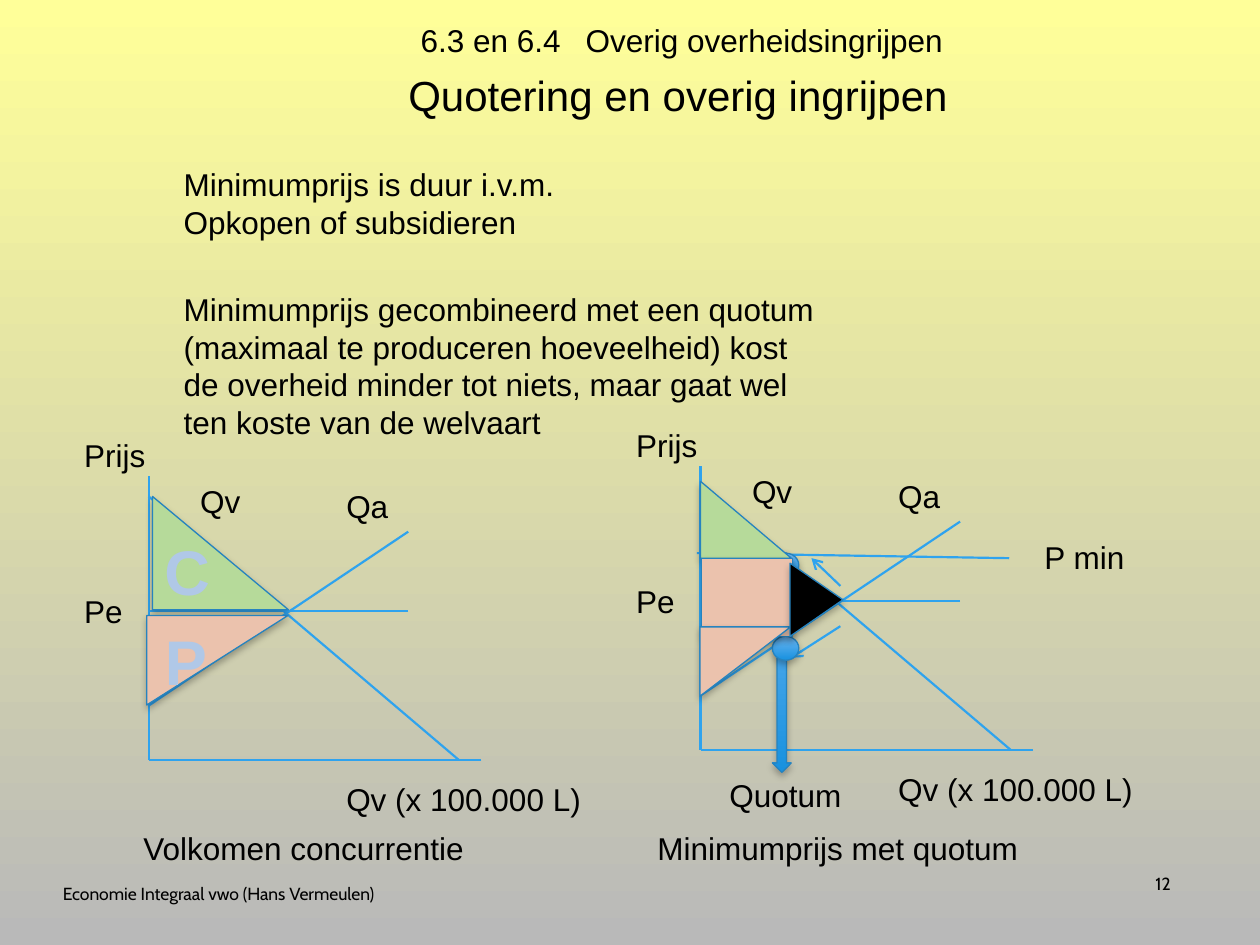
from lxml.etree import SubElement
from pptx import Presentation
from pptx.dml.color import RGBColor
from pptx.enum.shapes import MSO_CONNECTOR, MSO_SHAPE
from pptx.enum.text import MSO_ANCHOR, PP_ALIGN
from pptx.oxml.ns import qn
from pptx.util import Inches, Pt

BLUE, EDGE, GREEN, PINK, PALE = "2FA3EE", "2683BF", "B6DA9A", "EBC2AD", "B0C8E7"
SKY = ("6CB6F1", "1891DF")


def tint(color, value):
    """Set a colour from a hex string."""
    color.rgb = RGBColor.from_string(value)


def blend(fill, pair):
    """Fill from top to bottom with two colours."""
    fill.gradient()
    fill.gradient_angle = 270
    for stop, value in zip(fill.gradient_stops, pair):
        tint(stop.color, value)


def style(box, text, size=18, color="000000", font="Arial", bold=False,
          align=PP_ALIGN.LEFT, anchor=MSO_ANCHOR.TOP, wrap=True, tab=None):
    """Write text into a box and format its runs."""
    frame = box.text_frame
    frame.text = text
    frame.word_wrap = wrap
    frame.vertical_anchor = anchor
    for para in frame.paragraphs:
        para.alignment = align
        if tab:
            stops = SubElement(para._p.get_or_add_pPr(), qn("a:tabLst"))
            SubElement(stops, qn("a:tab"), pos=str(Inches(tab)), algn="l")
        for run in para.runs:
            run.font.name, run.font.size, run.font.bold = font, Pt(size), bold
            tint(run.font.color, color)


def label(slide, text, x, y, w, h=0.4, **look):
    """Add a text box."""
    box = slide.shapes.add_textbox(Inches(x), Inches(y), Inches(w), Inches(h))
    style(box, text, **look)


def line(slide, x1, y1, x2, y2, arrow=False):
    """Add a straight line, with an arrowhead if asked."""
    link = slide.shapes.add_connector(
        MSO_CONNECTOR.STRAIGHT, Inches(x1), Inches(y1), Inches(x2), Inches(y2))
    tint(link.line.color, BLUE)
    link.line.width = Pt(1.25)
    if arrow:
        SubElement(link.line._get_or_add_ln(), qn("a:tailEnd"), type="arrow")
    SubElement(link._element.spPr, qn("a:effectLst"))


def shade(shape):
    """Give a shape a soft shadow below it."""
    shape.shadow.inherit = False
    effects = shape._element.spPr.find(qn("a:effectLst"))
    outer = SubElement(effects, qn("a:outerShdw"), blurRad=str(Pt(4)),
                       dist=str(Pt(2)), dir="5400000", rotWithShape="0")
    black = SubElement(outer, qn("a:srgbClr"), val="000000")
    SubElement(black, qn("a:alpha"), val="28000")


def area(slide, kind, x, y, w, h, fill, turn=0):
    """Add a filled shape with an edge and a shadow."""
    shape = slide.shapes.add_shape(kind, Inches(x), Inches(y), Inches(w), Inches(h))
    shape.rotation = turn
    if isinstance(fill, tuple):
        blend(shape.fill, fill)
    else:
        shape.fill.solid()
        tint(shape.fill.fore_color, fill)
    tint(shape.line.color, EDGE)
    shape.line.width = Pt(0.75)
    shade(shape)


def graph(slide, x, y):
    """Draw axes, curves and labels from the top of the price axis."""
    base = y + 2.25
    for x1, y1, x2, y2 in (
            (0, 0, 0, 2.25), (2.64, 2.25, 0, 2.25), (0, 0.16, 2.46, 2.25),
            (2.06, 0.44, 0, 1.82), (2.06, 1.07, 0, 1.07)):
        line(slide, x + x1, y + y1, x + x2, y + y2)
    label(slide, "Qv", x + 0.31, y, 0.58)
    label(slide, "Qa", x + 1.47, y + 0.04, 0.58)
    label(slide, "Prijs", x - 0.61, y - 0.37, 0.79)
    label(slide, "Pe", x - 0.61, y + 0.87, 0.58)
    label(slide, "Qv (x 100.000 L)", x + 1.47, base + 0.11, 2.21)


def market(slide):
    """Draw the free market with both surpluses."""
    graph(slide, 1.18, 3.78)
    area(slide, MSO_SHAPE.RIGHT_TRIANGLE, 1.21, 3.94, 1.08, 0.9, GREEN)
    area(slide, MSO_SHAPE.RIGHT_TRIANGLE, 1.37, 4.68, 0.71, 1.12, PINK, 90)
    mark = dict(size=36, color=PALE, bold=True, align=PP_ALIGN.CENTER)
    label(slide, "C", 1.02, 4.18, 0.93, 0.71, **mark)
    label(slide, "P", 1.21, 4.89, 0.47, 0.71, wrap=False, **mark)
    label(slide, "Volkomen concurrentie", 1.04, 6.53, 3.07)


def quota(slide):
    """Draw the minimum price with a quota."""
    graph(slide, 5.56, 3.7)
    line(slide, 5.53, 4.39, 8.01, 4.43)
    label(slide, "P min", 8.19, 4.22, 0.99)
    label(slide, "Quotum", 5.69, 6.11, 1.16)
    label(slide, "Minimumprijs met quotum", 5.12, 6.53, 3.07)
    area(slide, MSO_SHAPE.DOWN_ARROW, 6.13, 4.39, 0.15, 1.74, SKY)
    line(slide, 6.67, 4.65, 6.44, 4.43, True)
    line(slide, 6.67, 4.97, 6.28, 5.22, True)
    for y in (4.39, 5.05):
        area(slide, MSO_SHAPE.OVAL, 6.13, y, 0.21, 0.19, SKY)
    area(slide, MSO_SHAPE.RIGHT_TRIANGLE, 5.56, 3.82, 0.72, 0.61, GREEN)
    area(slide, MSO_SHAPE.RECTANGLE, 5.57, 4.43, 0.72, 0.62, PINK)
    area(slide, MSO_SHAPE.RIGHT_TRIANGLE, 5.64, 4.89, 0.55, 0.72, PINK, 90)
    area(slide, MSO_SHAPE.ISOSCELES_TRIANGLE, 6.19, 4.55, 0.58, 0.42, "000000", 90)


def heading(slide):
    """Place the title and the section name."""
    title = slide.shapes.title
    title.left, title.top = Inches(3.14), Inches(0.5)
    title.width, title.height = Inches(4.6), Inches(0.5)
    style(title, "Quotering en overig ingrijpen", size=24)
    label(slide, "6.3 en 6.4\tOverig overheidsingrijpen", 3.24, 0.12, 5.2, tab=1.31)


def main():
    """Build the slide and save it."""
    deck = Presentation()
    deck.slide_width, deck.slide_height = Inches(10), Inches(7.5)
    slide = deck.slides.add_slide(deck.slide_layouts[5])
    blend(slide.background.fill, ("FFFF99", "B9B9B9"))
    heading(slide)
    label(slide, "Minimumprijs is duur i.v.m.\nOpkopen of subsidieren",
          1.36, 1.26, 3.99, 0.71)
    label(slide, "Minimumprijs gecombineerd met een quotum (maximaal te produceren "
          "hoeveelheid) kost de overheid minder tot niets, maar gaat wel ten koste "
          "van de welvaart", 1.36, 2.25, 5.33, 1.31)
    market(slide)
    quota(slide)
    foot = dict(size=10, font="Cabin", anchor=MSO_ANCHOR.MIDDLE)
    label(slide, "Economie Integraal vwo (Hans Vermeulen)", 0.4, 6.89, 5.47, **foot)
    label(slide, "12", 8.76, 6.81, 0.63, align=PP_ALIGN.RIGHT, **foot)
    deck.save("out.pptx")


if __name__ == "__main__":
    main()
